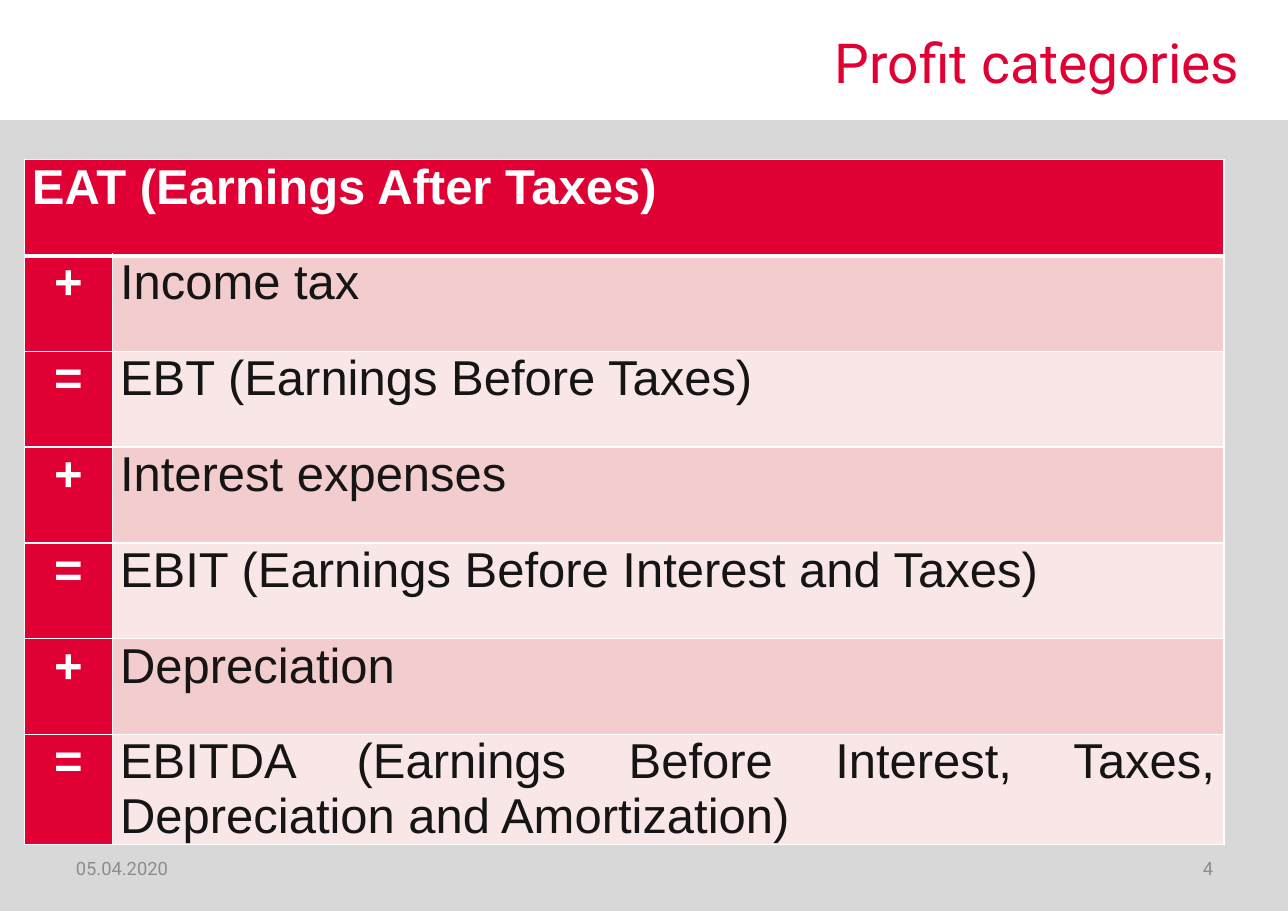
import pptx
import pptx.util
import pptx.dml.color
import pptx.enum.shapes
import pptx.enum.text
from dataclasses import dataclass
from lxml import etree

Inches = pptx.util.Inches
Pt = pptx.util.Pt
Align = pptx.enum.text.PP_ALIGN
Anchor = pptx.enum.text.MSO_ANCHOR


@dataclass(frozen=True)
class Theme:
    red: str = "E00034"
    pink: str = "F3CCCE"
    pale_pink: str = "F9E7E8"
    grey: str = "D8D8D8"
    footer_grey: str = "8C8C8C"
    ink: str = "151515"
    white: str = "FFFFFF"
    heading_font: str = "Roboto"
    table_font: str = "Arial"
    title_size: int = 36
    table_size: int = 32
    footer_size: int = 12


THEME = Theme()
HEADER = "EAT (Earnings After Taxes)"
STEPS = [
    ("+", "Income tax"),
    ("=", "EBT (Earnings Before Taxes)"),
    ("+", "Interest expenses"),
    ("=", "EBIT (Earnings Before Interest and Taxes)"),
    ("+", "Depreciation"),
    ("=", "EBITDA (Earnings Before Interest, Taxes, Depreciation and Amortization)"),
]


def rgb(color):
    return pptx.dml.color.RGBColor.from_string(color)


def write_text(text_frame, text, *, size, color, font=THEME.heading_font,
               bold=False, align=Align.LEFT):
    text_frame.word_wrap = True
    paragraph = text_frame.paragraphs[0]
    paragraph.text = text
    paragraph.alignment = align
    paragraph.font.name = font
    paragraph.font.size = Pt(size)
    paragraph.font.bold = bold
    paragraph.font.color.rgb = rgb(color)


def add_band(slide, left, top, width, height):
    band = slide.shapes.add_shape(
        pptx.enum.shapes.MSO_SHAPE.RECTANGLE,
        Inches(left), Inches(top), Inches(width), Inches(height))
    band.shadow.inherit = False
    band.fill.solid()
    band.fill.fore_color.rgb = rgb(THEME.grey)
    band.line.fill.background()


def set_title(slide, text):
    title = slide.shapes.title
    title.left, title.top = Inches(2.83), Inches(0.2)
    title.width, title.height = Inches(8.52), Inches(0.72)
    title.text_frame.vertical_anchor = Anchor.MIDDLE
    write_text(title.text_frame, text, size=THEME.title_size,
               color=THEME.red, align=Align.RIGHT)


def add_footer(slide, text, left, align):
    box = slide.shapes.add_textbox(Inches(left), Inches(7.66), Inches(2.73), Inches(0.44))
    box.text_frame.vertical_anchor = Anchor.MIDDLE
    write_text(box.text_frame, text, size=THEME.footer_size,
               color=THEME.footer_grey, align=align)


def set_borders(cell, top=1, bottom=1):
    properties = cell._tc.get_or_add_tcPr()
    for side, width in (("L", 1), ("R", 1), ("T", top), ("B", bottom)):
        line = etree.SubElement(properties, pptx.oxml.ns.qn(f"a:ln{side}"), w=str(Pt(width)))
        fill = etree.SubElement(line, pptx.oxml.ns.qn("a:solidFill"))
        etree.SubElement(fill, pptx.oxml.ns.qn("a:srgbClr"), val=THEME.white)


def format_cell(cell, text, fill, *, color=THEME.white, bold=True,
                align=Align.JUSTIFY, top=1, bottom=1):
    cell.margin_left = cell.margin_right = Inches(0.07)
    cell.margin_top = cell.margin_bottom = 0
    set_borders(cell, top, bottom)
    cell.fill.solid()
    cell.fill.fore_color.rgb = rgb(fill)
    write_text(cell.text_frame, text, size=THEME.table_size, color=color,
               font=THEME.table_font, bold=bold, align=align)


def add_profit_table(slide):
    row_height = 0.87
    row_count = len(STEPS) + 1
    table = slide.shapes.add_table(
        row_count, 2, Inches(0.22), Inches(1.45),
        Inches(10.89), Inches(row_height * row_count)).table
    table.columns[0].width = Inches(0.8)
    table.columns[1].width = Inches(10.09)
    for row in table.rows:
        row.height = Inches(row_height)

    # Header across both columns
    table.cell(0, 0).merge(table.cell(0, 1))
    format_cell(table.cell(0, 0), HEADER, THEME.red, bottom=3)
    set_borders(table.cell(0, 1), bottom=3)

    # Sign and amount, with additions darker than subtotals
    for row, (sign, label) in enumerate(STEPS, start=1):
        top = 3 if row == 1 else 1
        fill = THEME.pink if sign == "+" else THEME.pale_pink
        format_cell(table.cell(row, 0), sign, THEME.red, align=Align.CENTER, top=top)
        format_cell(table.cell(row, 1), label, fill, color=THEME.ink, bold=False, top=top)


def main():
    presentation = pptx.Presentation()
    presentation.slide_width = Inches(11.69)
    presentation.slide_height = Inches(8.27)
    slide = presentation.slides.add_slide(presentation.slide_layouts[5])

    # Background and title
    add_band(slide, 0, 1.09, 11.69, 7.18)
    set_title(slide, "Profit categories")

    # Table and footer
    add_profit_table(slide)
    add_footer(slide, "05.04.2020", 0.59, Align.LEFT)
    add_footer(slide, "4", 8.38, Align.RIGHT)

    presentation.save("out.pptx")


if __name__ == "__main__":
    main()
